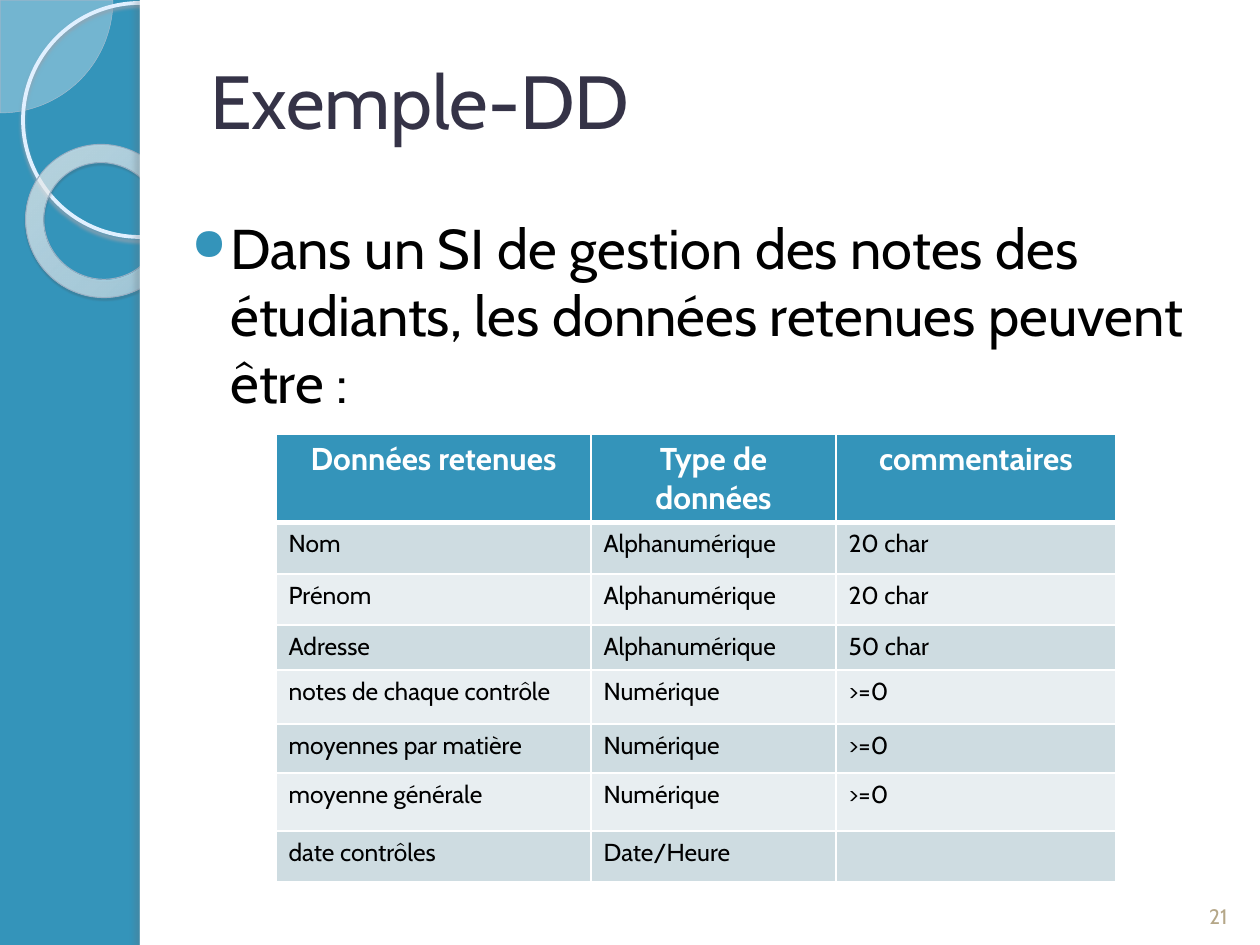
"""Builds the slide on the data dictionary of a student marks system."""
from pptx import Presentation
from pptx import oxml
from pptx import util as u
from pptx.dml import color
from pptx.enum import shapes, text
from pptx.oxml import ns

SCALE = 914400 / 126
FONT = "Cabin"
BLUE, WHITE, BLACK = "3494BA", "FFFFFF", "000000"
BANDS = ("E8EEF1", "CEDCE1")
COLUMNS = (315, 245, 280)
ROWS = (88, 52, 51, 45, 54, 49, 58, 49)
DATA = (
    ("Données retenues", "Type de données", "commentaires"),
    ("Nom", "Alphanumérique", "20 char"),
    ("Prénom", "Alphanumérique", "20 char"),
    ("Adresse", "Alphanumérique", "50 char"),
    ("notes de chaque contrôle", "Numérique", ">=0"),
    ("moyennes par matière", "Numérique", ">=0"),
    ("moyenne générale", "Numérique", ">=0"),
    ("date contrôles", "Date/Heure", ""),
)
RING_STOPS = ((0, "F7FBFE", 70), (70, "FBFDFF", 55), (100, "99C4E8", 60))


def px(value):
    return u.Emu(round(value * SCALE))


def rgb(code):
    return color.RGBColor.from_string(code)


def xml(tag, inner="", **attributes):
    listed = " ".join(f'{name}="{value}"' for name, value in attributes.items())
    return oxml.parse_xml(f'<a:{tag} {ns.nsdecls("a")} {listed}>{inner}</a:{tag}>')


def tint(code, alpha):
    return f'<a:srgbClr val="{code}"><a:alpha val="{alpha * 1000}"/></a:srgbClr>'


def add_shape(page, kind, place, fill=None, line=None):
    shape = page.shapes.add_shape(kind, *map(px, place))
    shape.shadow.inherit = False
    if fill:
        shape.fill.solid()
        shape.fill.fore_color.rgb = rgb(fill)
    else:
        shape.fill.background()
    if line:
        shape.line.color.rgb = rgb(line[0])
        shape.line.width = u.Pt(line[1])
    else:
        shape.line.fill.background()
    return shape


def add_shadow(shape, code, alpha, blur, distance, angle):
    effects = shape._element.spPr.find(ns.qn("a:effectLst"))
    effects.append(xml("outerShdw", tint(code, alpha), blurRad=u.Pt(blur),
                       dist=u.Pt(distance), dir=angle * 60000, rotWithShape=0))


def fill_ring(ring):
    ring.fill.gradient()
    stops = "".join(f'<a:gs pos="{place * 1000}">{tint(code, alpha)}</a:gs>'
                    for place, code, alpha in RING_STOPS)
    properties = ring._element.spPr
    properties.replace(properties.find(ns.qn("a:gradFill")), xml(
        "gradFill", f'<a:gsLst>{stops}</a:gsLst><a:path path="circle">'
        '<a:fillToRect l="-408000" t="-50000" r="508000" b="150000"/></a:path>',
        rotWithShape=1))


def add_decoration(page):
    kinds = shapes.MSO_SHAPE
    pie = add_shape(page, kinds.PIE, (-112, -112, 225, 225), "F5F9FD", ("A6BCCF", 0.25))
    pie.adjustments[0], pie.adjustments[1] = 0, 54
    pie.fill._xPr.find(ns.qn("a:solidFill"))[0].append(xml("alpha", val=33000))
    circle = add_shape(page, kinds.OVAL, (23, 3, 234, 234), line=("E0F0FF", 2.15))
    add_shadow(circle, "94A2AF", 85, 2, 2, 90)
    ring = add_shape(page, kinds.DONUT, (25, 145, 155, 152), line=("99B0C4", 0.58))
    ring.adjustments[0] = 0.12
    ring.rotation = 38.6
    fill_ring(ring)
    add_shadow(ring, "475159", 35, 1, 1.2, 75)
    add_shape(page, kinds.RECTANGLE, (140, 0, 1120, 945), WHITE)
    edge = add_shape(page, kinds.RECTANGLE, (140, 0, 10, 945), WHITE)
    add_shadow(edge, "666D73", 25, 3, 3, 180)


def add_span(para, words, size, code, bold=False):
    span = para.add_run()
    span.text = words
    span.font.name = FONT
    span.font.size = u.Pt(size)
    span.font.bold = bold
    span.font.color.rgb = rgb(code)


def add_text(page, place, words, size, code, anchor, align=text.PP_ALIGN.LEFT):
    box = page.shapes.add_textbox(*map(px, place))
    frame = box.text_frame
    frame.word_wrap = True
    frame.vertical_anchor = anchor
    para = frame.paragraphs[0]
    para.alignment = align
    add_span(para, words, size, code)
    return para


def add_bullet(para):
    para.space_before = u.Pt(6)
    properties = para._p.get_or_add_pPr()
    properties.set("marL", str(px(50)))
    properties.set("indent", str(px(-39)))
    properties.append(xml("buClr", f'<a:srgbClr val="{BLUE}"/>'))
    properties.append(xml("buSzPct", val=80000))
    properties.append(xml("buChar", char="●"))


def style_cell(cell, words, row):
    header = row == 0
    para = cell.text_frame.paragraphs[0]
    if header:
        para.alignment = text.PP_ALIGN.CENTER
    add_span(para, words, 18 if header else 14, WHITE if header else BLACK, header)
    widths = {"lnL": 1, "lnR": 1, "lnT": 3 if row == 1 else 1, "lnB": 3 if header else 1}
    properties = cell._tc.get_or_add_tcPr()
    for side, width in widths.items():
        properties.append(xml(
            side, f'<a:solidFill><a:srgbClr val="{WHITE}"/></a:solidFill>', w=u.Pt(width)))
    cell.fill.solid()
    cell.fill.fore_color.rgb = rgb(BLUE if header else BANDS[row % 2])


def add_data_table(page):
    place = (276, 434, sum(COLUMNS), sum(ROWS))
    table = page.shapes.add_table(len(ROWS), len(COLUMNS), *map(px, place)).table
    for column, width in zip(table.columns, COLUMNS):
        column.width = px(width)
    for row, (height, entries) in enumerate(zip(ROWS, DATA)):
        table.rows[row].height = px(height)
        for column, words in enumerate(entries):
            style_cell(table.cell(row, column), words, row)


def main():
    deck = Presentation()
    deck.slide_width, deck.slide_height = px(1260), px(945)
    page = deck.slides.add_slide(deck.slide_layouts[6])
    page.background.fill.solid()
    page.background.fill.fore_color.rgb = rgb(BLUE)
    add_decoration(page)
    anchors = text.MSO_ANCHOR
    add_bullet(add_text(
        page, (168, 207, 1063, 662),
        "Dans un SI de gestion des notes des étudiants, les données retenues peuvent être :",
        32, BLACK, anchors.TOP))
    add_text(page, (198, 20, 1033, 158), "Exemple-DD", 43, "353347", anchors.MIDDLE)
    add_data_table(page)
    add_text(page, (1187, 869, 63, 66), "21", 12, "B5A788", anchors.BOTTOM,
             text.PP_ALIGN.CENTER)
    deck.save("out.pptx")


if __name__ == "__main__":
    main()
